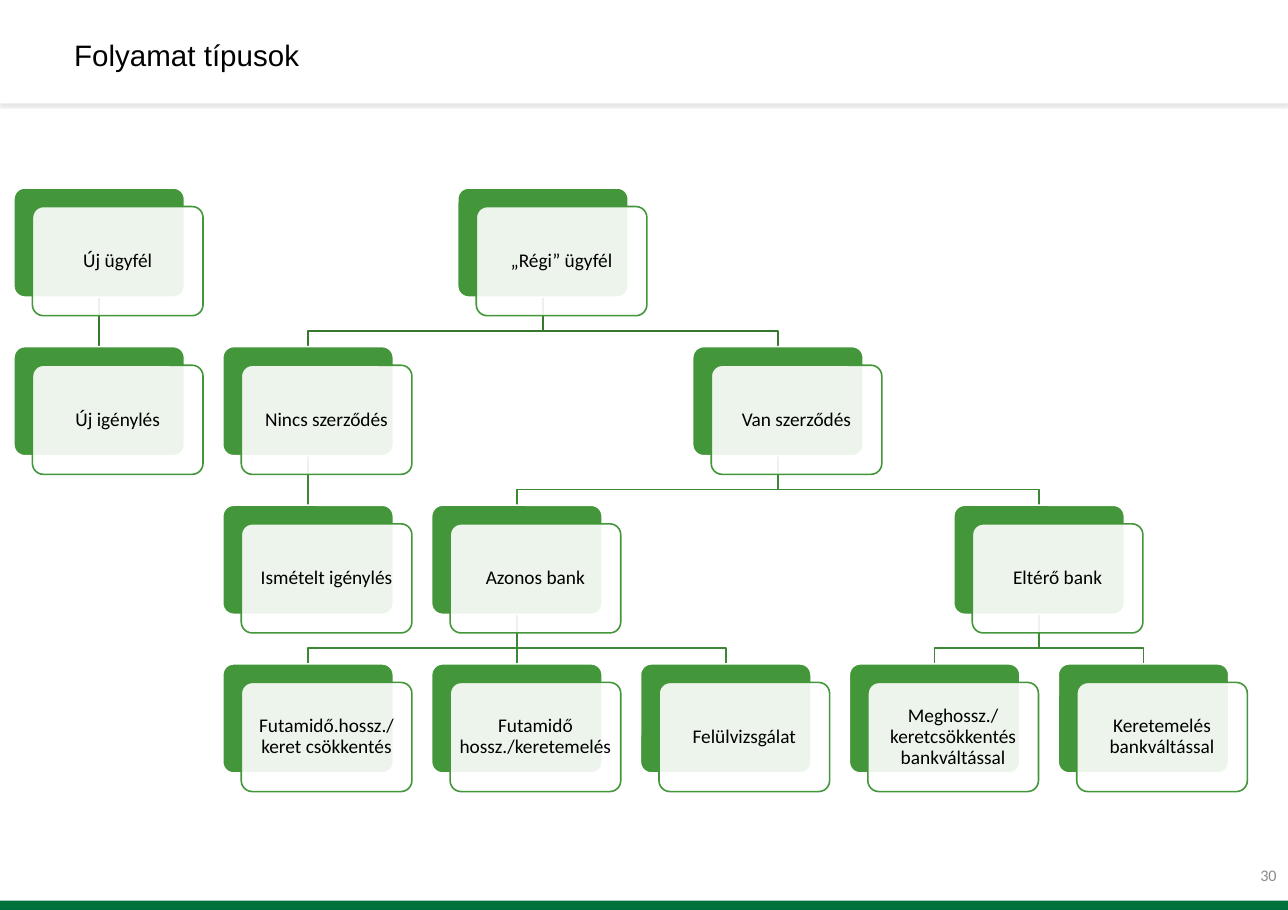
import pptx
import pptx.util
import pptx.dml.color
import pptx.enum.shapes
import pptx.enum.text
import pptx.oxml
import pptx.oxml.ns
from dataclasses import dataclass

Inches = pptx.util.Inches
Pt = pptx.util.Pt
Kind = pptx.enum.shapes.MSO_SHAPE
Align = pptx.enum.text.PP_ALIGN
NS = pptx.oxml.ns.nsdecls("a")

WIDE, HIGH = 11.1, 7.84
LEFT, TOP = 0.12, 1.62
STEP, DROP = 1.8, 4.1 / 3
CARD_W, CARD_H = 1.47, 0.94
SHIFT, BEND = 0.16, 0.29

NODES = {
    "Új ügyfél": (0, 0, ["Új igénylés"]),
    "Új igénylés": (0, 1, []),
    "„Régi” ügyfél": (2.125, 0, ["Nincs szerződés", "Van szerződés"]),
    "Nincs szerződés": (1, 1, ["Ismételt igénylés"]),
    "Ismételt igénylés": (1, 2, []),
    "Van szerződés": (3.25, 1, ["Azonos bank", "Eltérő bank"]),
    "Azonos bank": (2, 2, ["Futamidő.hossz./keret csökkentés",
                           "Futamidő hossz./keretemelés",
                           "Felülvizsgálat"]),
    "Futamidő.hossz./keret csökkentés": (1, 3, []),
    "Futamidő hossz./keretemelés": (2, 3, []),
    "Felülvizsgálat": (3, 3, []),
    "Eltérő bank": (4.5, 2, ["Meghossz./keretcsökkentés bankváltással",
                             "Keretemelés bankváltással"]),
    "Meghossz./keretcsökkentés bankváltással": (4, 3, []),
    "Keretemelés bankváltással": (5, 3, []),
}


@dataclass(frozen=True)
class Theme:
    white: str = "FFFFFF"
    black: str = "000000"
    gray: str = "8C8C8C"
    shade: str = "8A8A8A"
    green: str = "439639"
    band: str = "00703C"
    trunk: str = "36782E"
    branch: str = "3D8834"
    head: float = 18.3
    body: float = 12
    small: float = 10
    head_font: str = "Arial"
    body_font: str = "Calibri"


def color(code):
    return pptx.dml.color.RGBColor.from_string(code)


def write(shape, text, *, size, font, ink, align=Align.LEFT, space=1, pad=0.1):
    frame = shape.text_frame
    frame.word_wrap = True
    frame.vertical_anchor = pptx.enum.text.MSO_ANCHOR.MIDDLE
    frame.margin_left = frame.margin_right = Inches(pad)
    frame.margin_top = frame.margin_bottom = Inches(0.05)
    para = frame.paragraphs[0]
    para.alignment = align
    para.line_spacing = space
    run = para.add_run()
    run.text = text
    run.font.size = Pt(size)
    run.font.name = font
    run.font.color.rgb = color(ink)


def spot(col, row):
    return LEFT + col * STEP, TOP + row * DROP


class Sheet:
    def __init__(self, slide, theme):
        self.shapes = slide.shapes
        self.theme = theme

    def box(self, x, y, w, h, fill, line=None, kind=Kind.RECTANGLE):
        shape = self.shapes.add_shape(kind, Inches(x), Inches(y), Inches(w), Inches(h))
        shape.shadow.inherit = False
        shape.fill.solid()
        shape.fill.fore_color.rgb = color(fill)
        if line:
            shape.line.color.rgb = color(line)
            shape.line.width = Pt(1)
        else:
            shape.line.fill.background()
        if kind == Kind.ROUNDED_RECTANGLE:
            shape.adjustments[0] = 0.1
        return shape

    def label(self, x, y, w, h, text, **style):
        write(self.shapes.add_textbox(Inches(x), Inches(y), Inches(w), Inches(h)),
              text, **style)

    def header(self):
        bar = self.box(0, 0.1, WIDE, 0.79, self.theme.white)
        glow = pptx.oxml.parse_xml(
            f'<a:outerShdw {NS} blurRad="{Pt(1)}" dist="{Pt(2)}" dir="5400000" '
            f'algn="t" rotWithShape="0"><a:srgbClr val="{self.theme.shade}">'
            '<a:alpha val="20000"/></a:srgbClr></a:outerShdw>')
        bar.element.spPr.find(pptx.oxml.ns.qn("a:effectLst")).append(glow)

    def link(self, start, end):
        x, y = spot(*start)
        x, y = x + CARD_W / 2, y + CARD_H
        goal, base = spot(*end)
        goal += CARD_W / 2
        if start[0] == end[0]:
            line = self.shapes.add_connector(
                pptx.enum.shapes.MSO_CONNECTOR.STRAIGHT,
                Inches(x), Inches(y), Inches(goal), Inches(base))
            line.element.spPr.append(pptx.oxml.parse_xml(f"<a:effectLst {NS}/>"))
        else:
            path = self.shapes.build_freeform(Inches(x), Inches(y))
            turns = [(x, y + BEND), (goal, y + BEND), (goal, base)]
            path.add_line_segments([(Inches(a), Inches(b)) for a, b in turns],
                                   close=False)
            line = path.convert_to_shape()
            line.shadow.inherit = False
            line.fill.background()
        line.line.color.rgb = color(self.theme.branch if start[1] else self.theme.trunk)
        line.line.width = Pt(1)

    def card(self, text, col, row):
        look = self.theme
        x, y = spot(col, row)
        self.box(x, y, CARD_W, CARD_H, look.green, look.white, Kind.ROUNDED_RECTANGLE)
        front = self.box(x + SHIFT, y + SHIFT, CARD_W, CARD_H, look.white,
                         look.green, Kind.ROUNDED_RECTANGLE)
        tint = front.element.spPr.find(".//" + pptx.oxml.ns.qn("a:srgbClr"))
        tint.append(pptx.oxml.parse_xml(f'<a:alpha {NS} val="90000"/>'))
        write(front, text, size=look.body, font=look.body_font, ink=look.black,
              align=Align.CENTER, space=0.9, pad=0.05)


def main():
    deck = pptx.Presentation()
    deck.slide_width, deck.slide_height = Inches(WIDE), Inches(HIGH)
    look = Theme()
    sheet = Sheet(deck.slides.add_slide(deck.slide_layouts[6]), look)
    sheet.box(0, 7.76, WIDE, HIGH - 7.76, look.band)
    sheet.header()
    sheet.label(0.54, 0, 8.19, 0.98, "Folyamat típusok", size=look.head,
                font=look.head_font, ink=look.black, space=0.9)
    sheet.label(8.6, 7.33, 2.5, 0.42, "30", size=look.small,
                font=look.body_font, ink=look.gray, align=Align.RIGHT)
    for col, row, kids in NODES.values():
        for kid in kids:
            sheet.link((col, row), NODES[kid][:2])
    for text, (col, row, _) in NODES.items():
        sheet.card(text, col, row)
    deck.save("out.pptx")


if __name__ == "__main__":
    main()
